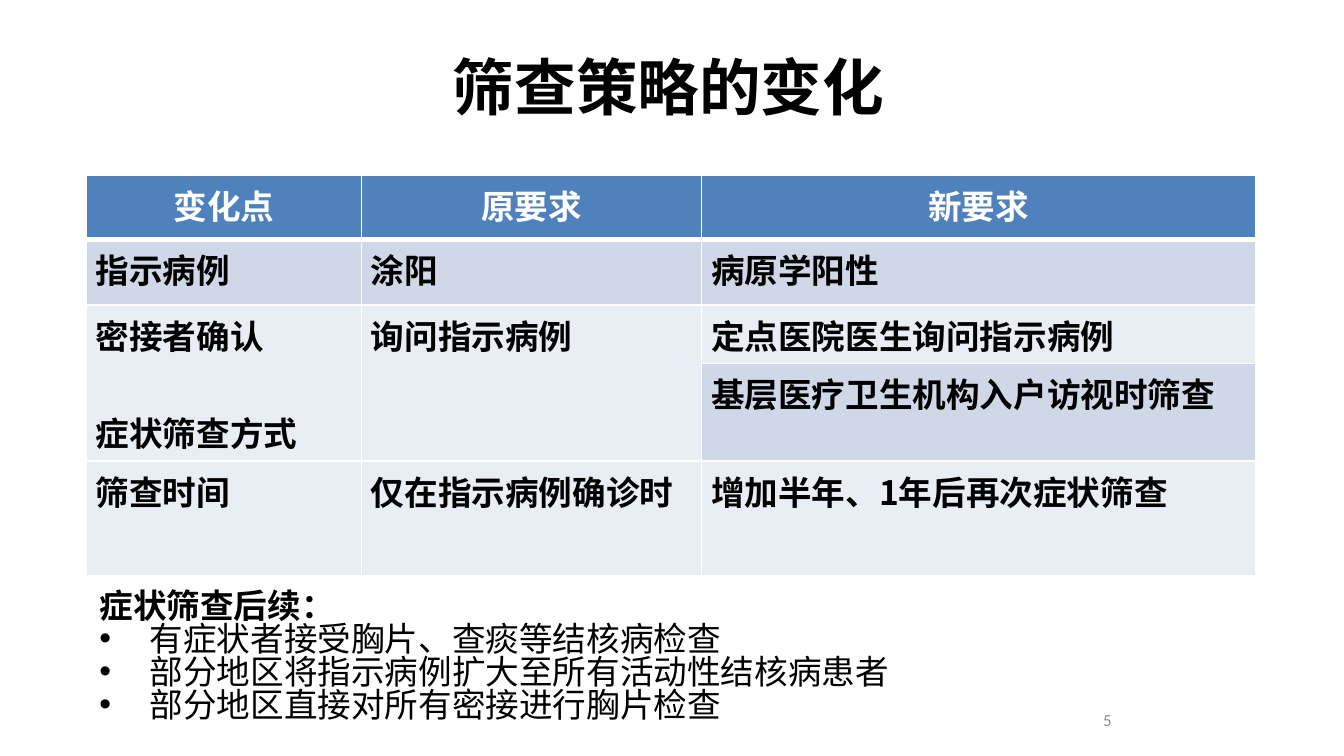
import pptx
import pptx.util
import pptx.dml.color
import pptx.enum.text
import pptx.oxml.ns
from lxml import etree
from pptx.util import Cm, Pt

FONT = "Noto Sans CJK SC"
ALIGN = pptx.enum.text.PP_ALIGN
ANCHOR = pptx.enum.text.MSO_ANCHOR


def color(hex_string):
    return pptx.dml.color.RGBColor.from_string(hex_string)


def write(paragraph, text, size, hex_string="000000", bold=True, align=ALIGN.LEFT, name=FONT):
    paragraph.text = text
    paragraph.alignment = align
    font = paragraph.font
    font.size, font.bold, font.name = Pt(size), bold, name
    font.color.rgb = color(hex_string)
    # Chinese characters take the East Asian typeface
    latin = font._element.find(pptx.oxml.ns.qn("a:latin"))
    east_asian = etree.Element(pptx.oxml.ns.qn("a:ea"), typeface=name)
    latin.addnext(east_asian)


presentation = pptx.Presentation()
presentation.slide_width, presentation.slide_height = Cm(25.4), Cm(14.29)
slide = presentation.slides.add_slide(presentation.slide_layouts[6])

# Slide number
number_box = slide.shapes.add_textbox(Cm(16.81), Cm(13.23), Cm(4.45), Cm(0.76))
number_box.text_frame.word_wrap = True
number_box.text_frame.vertical_anchor = ANCHOR.MIDDLE
write(number_box.text_frame.paragraphs[0], "5", 9, "898989", False, ALIGN.RIGHT, "Calibri")

# Title
title_box = slide.shapes.add_textbox(Cm(4.06), Cm(0.36), Cm(17.15), Cm(1.96))
title_frame = title_box.text_frame
title_frame.word_wrap = True
title_frame.vertical_anchor = ANCHOR.BOTTOM
title_frame.margin_left = title_frame.margin_right = title_frame.margin_bottom = 0
title_frame.margin_top = Cm(0.1)
write(title_frame.paragraphs[0], "筛查策略的变化", 33, align=ALIGN.CENTER)

# Comparison table
HEADER, DARK, LIGHT = "4F81BD", "D0D8E8", "E9EDF4"
rows = [
    (1.22, HEADER, ["变化点", "原要求", "新要求"]),
    (1.24, DARK, ["指示病例", "涂阳", "病原学阳性"]),
    (1.1, LIGHT, ["密接者确认\n症状筛查方式", "询问指示病例", "定点医院医生询问指示病例"]),
    (1.84, DARK, ["", "", "基层医疗卫生机构入户访视时筛查"]),
    (2.17, LIGHT, ["筛查时间", "仅在指示病例确诊时", "增加半年、1年后再次症状筛查"]),
]
table = slide.shapes.add_table(5, 3, Cm(1.63), Cm(3.31), Cm(22.1), Cm(7.57)).table
for column, width in zip(table.columns, (5.2, 6.43, 10.47)):
    column.width = Cm(width)
for column_index in (0, 1):
    table.cell(2, column_index).merge(table.cell(3, column_index))

for row_index, (height, fill, texts) in enumerate(rows):
    table.rows[row_index].height = Cm(height)
    for column_index, text in enumerate(texts):
        cell = table.cell(row_index, column_index)
        cell.margin_left = cell.margin_right = Cm(0.18)
        cell.margin_top = cell.margin_bottom = Cm(0.1)

        # White borders, thicker under the header
        properties = cell._tc.get_or_add_tcPr()
        for side in "LRTB":
            thick = (row_index, side) in ((0, "B"), (1, "T"))
            line = etree.SubElement(properties, pptx.oxml.ns.qn("a:ln" + side), w=str(Pt(3 if thick else 1)))
            solid = etree.SubElement(line, pptx.oxml.ns.qn("a:solidFill"))
            etree.SubElement(solid, pptx.oxml.ns.qn("a:srgbClr"), val="FFFFFF")
        cell.fill.solid()
        cell.fill.fore_color.rgb = color(LIGHT if cell.is_spanned else fill)
        if cell.is_spanned:
            continue

        is_header = row_index == 0
        for line_index, line_text in enumerate(text.split("\n")):
            frame = cell.text_frame
            paragraph = frame.add_paragraph() if line_index else frame.paragraphs[0]
            if line_index:
                paragraph.space_before = Pt(26)
            write(paragraph, line_text, 18, "FFFFFF" if is_header else "000000",
                  align=ALIGN.CENTER if is_header else ALIGN.LEFT)

# Follow-up after symptom screening
follow_up_box = slide.shapes.add_textbox(Cm(1.63), Cm(11.06), Cm(21.56), Cm(3.3))
follow_up_frame = follow_up_box.text_frame
follow_up_frame.word_wrap = True
follow_up_lines = [
    "症状筛查后续：",
    "有症状者接受胸片、查痰等结核病检查",
    "部分地区将指示病例扩大至所有活动性结核病患者",
    "部分地区直接对所有密接进行胸片检查",
]
for index, text in enumerate(follow_up_lines):
    paragraph = follow_up_frame.add_paragraph() if index else follow_up_frame.paragraphs[0]
    paragraph.line_spacing = 0.82
    if index:
        properties = paragraph._p.get_or_add_pPr()
        properties.set("marL", str(Cm(0.95)))
        properties.set("indent", str(-Cm(0.95)))
        etree.SubElement(properties, pptx.oxml.ns.qn("a:buFont"), typeface="Arial")
        etree.SubElement(properties, pptx.oxml.ns.qn("a:buChar"), char="•")
    write(paragraph, text, 18, bold=index == 0)

presentation.save("out.pptx")
